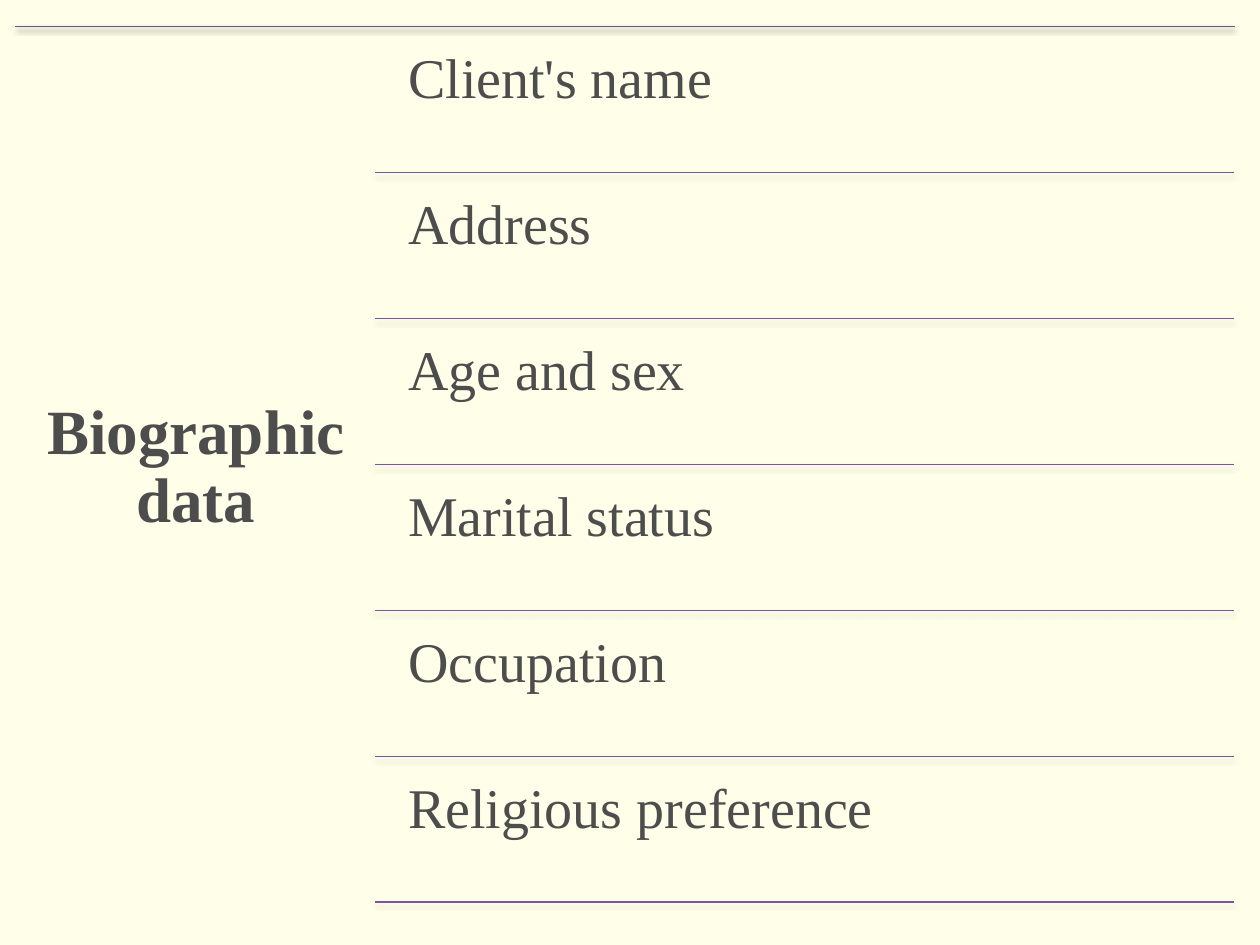
from typing import NamedTuple

from lxml.etree import SubElement
from pptx import Presentation
from pptx.dml.color import RGBColor as RGB
from pptx.enum.shapes import MSO_CONNECTOR as LINK
from pptx.enum.text import MSO_ANCHOR as ANCHOR, MSO_AUTO_SIZE as FIT, PP_ALIGN as ALIGN
from pptx.oxml.ns import qn
from pptx.util import Inches, Pt

CREAM = RGB(0xFF, 0xFF, 0xE9)
GREY = RGB(0x4D, 0x4D, 0x4D)
PLUM = RGB(0x6F, 0x4D, 0x94)
VIOLET = RGB(0x7A, 0x55, 0xA3)
FONT = "Times New Roman"

FIELDS = ["Client's name", "Address", "Age and sex", "Marital status",
          "Occupation", "Religious preference"]
FIRST, LAST = 1.37, 7.16  # heights of the first and last row rules
PITCH = (LAST - FIRST) / (len(FIELDS) - 1)
ROW_H = 1.1


class Rule(NamedTuple):
    left: float
    right: float
    y: float
    color: RGB
    alpha: int  # shadow opacity, percent
    drop: float  # shadow distance, points


def add_rule(slide, rule: Rule) -> None:
    y = Inches(rule.y)
    line = slide.shapes.add_connector(
        LINK.STRAIGHT, Inches(rule.left), y, Inches(rule.right), y)
    line.line.color.rgb = rule.color
    line.line.width = Pt(0.75)
    effects = SubElement(line._element.spPr, qn("a:effectLst"))
    shadow = SubElement(effects, qn("a:outerShdw"), blurRad=str(Pt(3.1)),
                        dist=str(Pt(rule.drop)), dir="5400000", rotWithShape="0")
    tint = SubElement(shadow, qn("a:srgbClr"), val="000000")
    SubElement(tint, qn("a:alpha"), val=str(rule.alpha * 1000))


def fill_text(shape, text: str, size: int, inset: float, bold: bool = False,
              align: ALIGN = ALIGN.LEFT, anchor: ANCHOR = ANCHOR.TOP) -> None:
    frame = shape.text_frame
    frame.word_wrap = True
    frame.auto_size = FIT.NONE
    frame.vertical_anchor = anchor
    frame.margin_left = frame.margin_right = Inches(inset)
    frame.margin_top = frame.margin_bottom = Inches(inset)
    para = frame.paragraphs[0]
    para.alignment = align
    para.line_spacing = 0.9
    run = para.add_run()
    run.text = text
    run.font.name = FONT
    run.font.size = Pt(size)
    run.font.bold = bold
    run.font.color.rgb = GREY


def main() -> None:
    deck = Presentation()
    deck.slide_width, deck.slide_height = Inches(10), Inches(7.5)
    slide = deck.slides.add_slide(deck.slide_layouts.get_by_name("Title Only"))
    slide.background.fill.solid()
    slide.background.fill.fore_color.rgb = CREAM

    add_rule(slide, Rule(0.12, 9.8, 0.21, PLUM, 35, 1.8))

    title = slide.shapes.title
    title.left, title.top = Inches(0.12), Inches(0.21)
    title.width, title.height = Inches(2.87), Inches(7.01)
    fill_text(title, "Biographic data", 36, 0.15, True, ALIGN.CENTER, ANCHOR.MIDDLE)

    for i, field in enumerate(FIELDS):
        y = FIRST + i * PITCH
        box = slide.shapes.add_textbox(
            Inches(3.11), Inches(y - ROW_H), Inches(6.68), Inches(ROW_H))
        fill_text(box, field, 32, 0.13)
        add_rule(slide, Rule(2.98, 9.79, y, VIOLET, 38, 1.6))

    deck.save("out.pptx")


if __name__ == "__main__":
    main()
